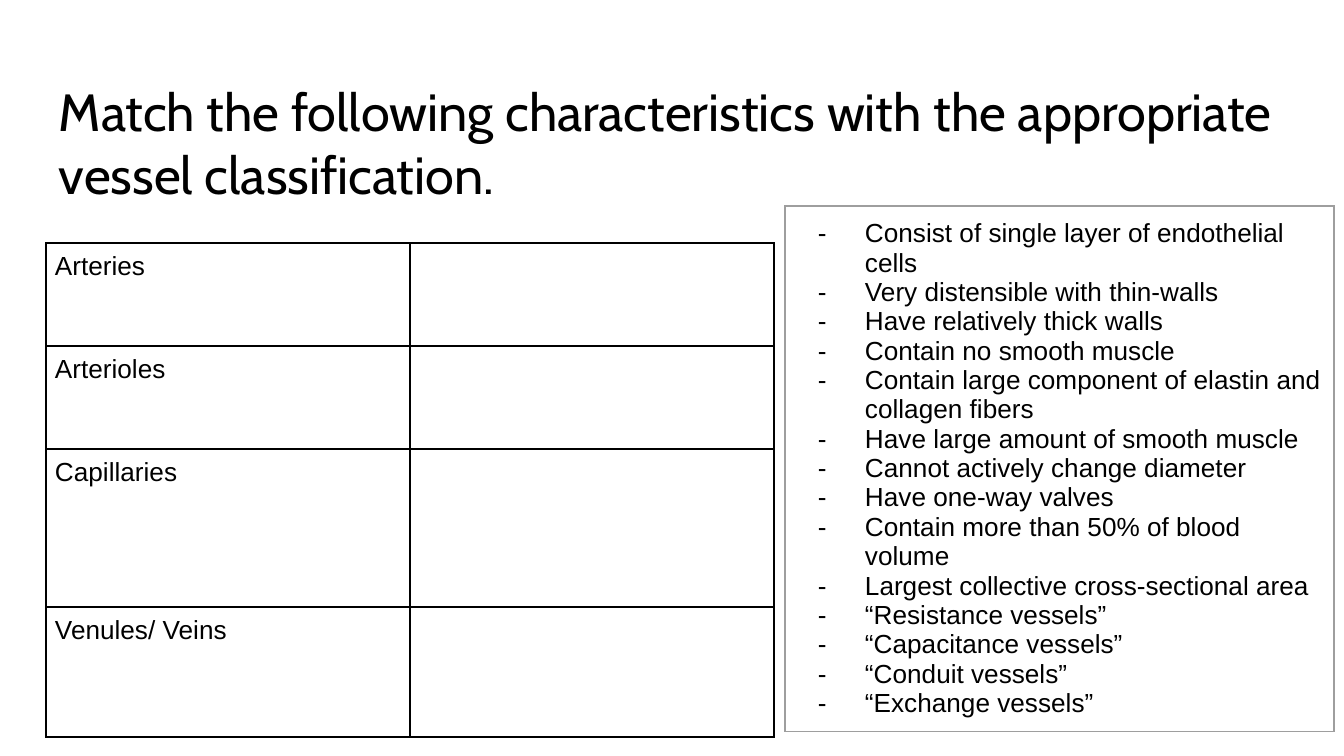
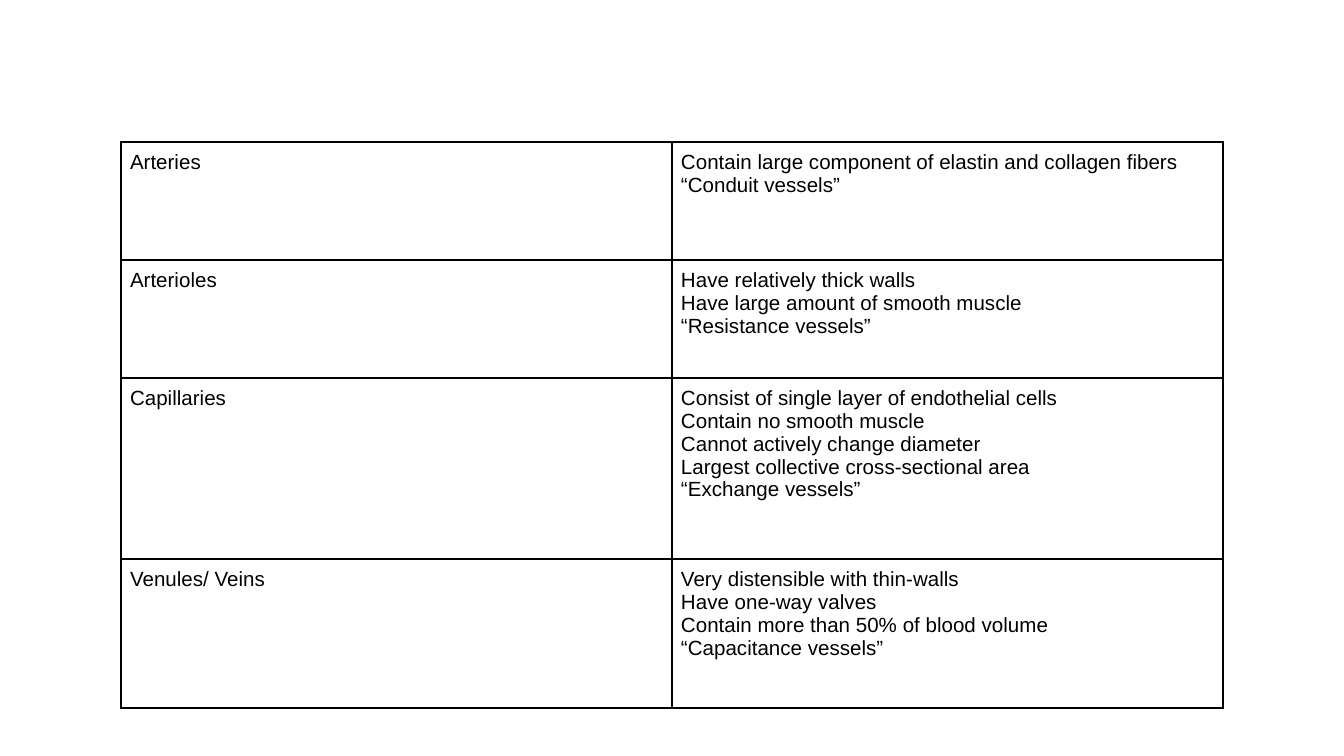
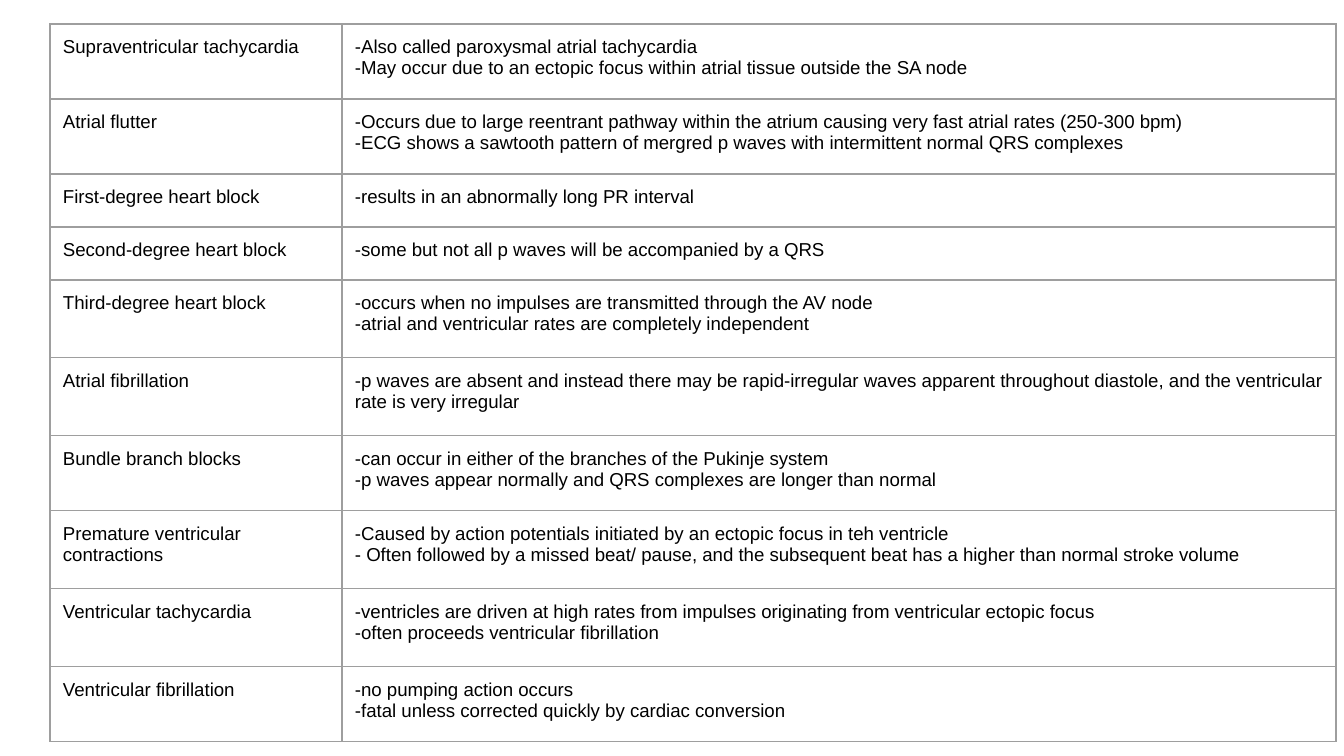
from dataclasses import dataclass

from pptx import Presentation
from pptx.dml.color import RGBColor
from pptx.enum.text import MSO_ANCHOR, MSO_AUTO_SIZE, PP_ALIGN
from pptx.oxml.ns import qn
from pptx.slide import Slide
from pptx.table import _Cell
from pptx.text.text import _Paragraph
from pptx.util import Emu, Pt
from lxml.etree import SubElement

SLIDE_W, SLIDE_H = 1344, 756
EMU_PER_PX = 9144000 / SLIDE_W

BLACK, GREY, WHITE = "000000", "9E9E9E", "FFFFFF"
BODY_FONT, TITLE_FONT = "Arial", "Cabin"
TITLE_ONLY, BLANK = 5, 6

Lines = list[str]


@dataclass(frozen=True)
class GridStyle:
    size: int
    inset: int
    border: str
    border_pt: float
    bullet: str = ""


@dataclass(frozen=True)
class Grid:
    left: int
    top: int
    cols: list[int]
    rows: list[int]
    cells: list[list[Lines]]
    style: GridStyle


VESSELS: dict[str, Lines] = {
    "Arteries": [
        "Contain large component of elastin and collagen fibers",
        "“Conduit vessels”",
    ],
    "Arterioles": [
        "Have relatively thick walls",
        "Have large amount of smooth muscle",
        "“Resistance vessels”",
    ],
    "Capillaries": [
        "Consist of single layer of endothelial cells",
        "Contain no smooth muscle",
        "Cannot actively change diameter",
        "Largest collective cross-sectional area",
        "“Exchange vessels”",
    ],
    "Venules/ Veins": [
        "Very distensible with thin-walls",
        "Have one-way valves",
        "Contain more than 50% of blood volume",
        "“Capacitance vessels”",
    ],
}

CHOICES: Lines = [
    "Consist of single layer of endothelial cells",
    "Very distensible with thin-walls",
    "Have relatively thick walls",
    "Contain no smooth muscle",
    "Contain large component of elastin and collagen fibers",
    "Have large amount of smooth muscle",
    "Cannot actively change diameter",
    "Have one-way valves",
    "Contain more than 50% of blood volume",
    "Largest collective cross-sectional area",
    "“Resistance vessels”",
    "“Capacitance vessels”",
    "“Conduit vessels”",
    "“Exchange vessels”",
]

ARRHYTHMIAS: dict[str, Lines] = {
    "Supraventricular tachycardia": [
        "-Also called paroxysmal atrial tachycardia",
        "-May occur due to an ectopic focus within atrial tissue outside the SA node",
    ],
    "Atrial flutter": [
        "-Occurs due to large reentrant pathway within the atrium causing very fast "
        "atrial rates (250-300 bpm)",
        "-ECG shows a sawtooth pattern of mergred p waves with intermittent normal "
        "QRS complexes",
    ],
    "First-degree heart block": ["-results in an abnormally long PR interval"],
    "Second-degree heart block": [
        "-some but not all p waves will be accompanied by a QRS",
    ],
    "Third-degree heart block": [
        "-occurs when no impulses are transmitted through the AV node",
        "-atrial and ventricular rates are completely independent",
    ],
    "Atrial fibrillation": [
        "-p waves are absent and instead there may be rapid-irregular waves apparent "
        "throughout diastole, and the ventricular rate is very irregular",
    ],
    "Bundle branch blocks": [
        "-can occur in either of the branches of the Pukinje system",
        "-p waves appear normally and QRS complexes are longer than normal",
    ],
    "Premature ventricular contractions": [
        "-Caused by action potentials initiated by an ectopic focus in teh ventricle",
        "- Often followed by a missed beat/ pause, and the subsequent beat has a "
        "higher than normal stroke volume",
    ],
    "Ventricular tachycardia": [
        "-ventricles are driven at high rates from impulses originating from "
        "ventricular ectopic focus",
        "-often proceeds ventricular fibrillation",
    ],
    "Ventricular fibrillation": [
        "-no pumping action occurs",
        "-fatal unless corrected quickly by cardiac conversion",
    ],
}


def px(n: int) -> Emu:
    return Emu(round(n * EMU_PER_PX))


def rgb(color: str) -> RGBColor:
    return RGBColor.from_string(color)


def set_insets(box, inset: int) -> None:
    box.margin_left = box.margin_right = px(inset)
    box.margin_top = box.margin_bottom = px(inset)


def add_run(p: _Paragraph, text: str, size: int, font: str) -> None:
    r = p.add_run()
    r.text = text
    r.font.size = Pt(size)
    r.font.name = font
    r.font.color.rgb = rgb(BLACK)


def add_color(parent, color: str) -> None:
    SubElement(parent, qn("a:srgbClr"), val=color)


def set_bullet(p: _Paragraph, char: str) -> None:
    pPr = p._p.get_or_add_pPr()
    pPr.set("marL", str(px(67)))
    pPr.set("indent", str(px(-47)))
    add_color(SubElement(pPr, qn("a:buClr")), BLACK)
    SubElement(pPr, qn("a:buFont"), typeface=BODY_FONT)
    SubElement(pPr, qn("a:buChar"), char=char)


def set_borders(cell: _Cell, color: str, width: float) -> None:
    tcPr = cell._tc.get_or_add_tcPr()
    for side in "LRTB":
        ln = SubElement(tcPr, qn(f"a:ln{side}"), w=str(Pt(width)))
        add_color(SubElement(ln, qn("a:solidFill")), color)


def fill_cell(cell: _Cell, lines: Lines, style: GridStyle) -> None:
    set_borders(cell, style.border, style.border_pt)
    cell.fill.background()
    set_insets(cell, style.inset)
    tf = cell.text_frame
    for i, line in enumerate(lines):
        p = tf.add_paragraph() if i else tf.paragraphs[0]
        if style.bullet:
            set_bullet(p, style.bullet)
        add_run(p, line, style.size, BODY_FONT)


def add_grid(s: Slide, grid: Grid) -> None:
    table = s.shapes.add_table(
        len(grid.rows), len(grid.cols), px(grid.left), px(grid.top),
        px(sum(grid.cols)), px(sum(grid.rows)),
    ).table
    table.first_row = table.horz_banding = False
    for col, width in zip(table.columns, grid.cols):
        col.width = px(width)
    for row, height, contents in zip(table.rows, grid.rows, grid.cells):
        row.height = px(height)
        for cell, lines in zip(row.cells, contents):
            fill_cell(cell, lines, grid.style)


def set_title(s: Slide, text: str) -> None:
    sp = s.shapes.title
    sp.left, sp.top, sp.width, sp.height = px(46), px(66), px(1252), px(84)
    tf = sp.text_frame
    tf.word_wrap = True
    tf.auto_size = MSO_AUTO_SIZE.NONE
    tf.vertical_anchor = MSO_ANCHOR.TOP
    set_insets(tf, 13)
    p = tf.paragraphs[0]
    p.alignment = PP_ALIGN.LEFT
    add_run(p, text, 28, TITLE_FONT)


def labelled_rows(entries: dict[str, Lines]) -> list[list[Lines]]:
    return [[[name], lines] for name, lines in entries.items()]


MATCHING = Grid(46, 243, [364, 364], [103, 103, 158, 130],
                [[[name], []] for name in VESSELS],
                GridStyle(14, 9, BLACK, 1))
CHOICE_LIST = Grid(785, 206, [549], [440], [[CHOICES]],
                   GridStyle(14, 13, GREY, 0.75, bullet="-"))
ANSWERS = Grid(121, 142, [551, 551], [118, 118, 181, 149],
               labelled_rows(VESSELS), GridStyle(11, 9, BLACK, 1))
RHYTHMS = Grid(50, 24, [292, 994], [75, 75, 53, 53, 78, 78, 75, 78, 78, 75],
               labelled_rows(ARRHYTHMIAS), GridStyle(10, 13, GREY, 0.75))


def main() -> None:
    prs = Presentation()
    prs.slide_width, prs.slide_height = px(SLIDE_W), px(SLIDE_H)
    background = prs.slide_master.background.fill
    background.solid()
    background.fore_color.rgb = rgb(WHITE)

    s = prs.slides.add_slide(prs.slide_layouts[TITLE_ONLY])
    set_title(s, "Match the following characteristics with the appropriate "
                 "vessel classification.")
    add_grid(s, CHOICE_LIST)
    add_grid(s, MATCHING)

    for grid in (ANSWERS, RHYTHMS):
        add_grid(prs.slides.add_slide(prs.slide_layouts[BLANK]), grid)

    prs.save("out.pptx")


if __name__ == "__main__":
    main()
